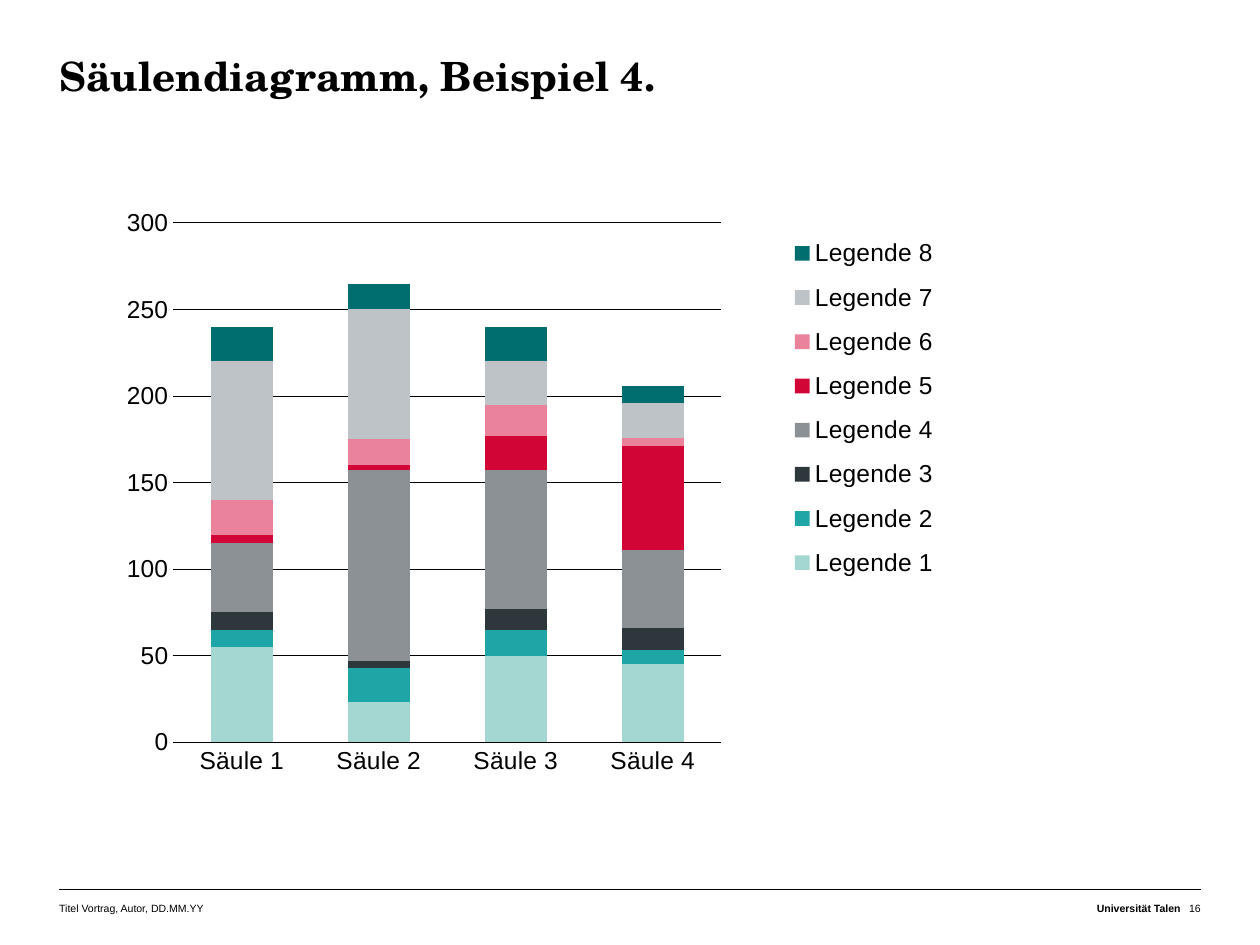
from dataclasses import dataclass

import lxml.etree
import pptx
import pptx.chart.data
import pptx.dml.color
import pptx.enum.chart
import pptx.enum.shapes
import pptx.enum.text
import pptx.oxml
import pptx.oxml.ns
import pptx.util

Pt = pptx.util.Pt
Align = pptx.enum.text.PP_ALIGN
qn = pptx.oxml.ns.qn


@dataclass(frozen=True)
class Theme:
    ink: str = "000000"
    body_font: str = "Arial"
    title_font: str = "TeX Gyre Schola"
    title_size: float = 23
    title_leading: float = 25
    chart_size: float = 14
    footer_size: float = 6
    grid_width: float = 0.5
    rule_width: float = 0.25


@dataclass(frozen=True)
class Box:
    left: float
    top: float
    width: float
    height: float


@dataclass(frozen=True)
class FooterItem:
    text: str
    left: float
    width: float
    align: Align
    bold: bool = False


@dataclass(frozen=True)
class Series:
    name: str
    color: str
    values: tuple[int, ...]


THEME = Theme()
MARGIN, CONTENT_WIDTH = 33.84, 652.32
RIGHT = MARGIN + CONTENT_WIDTH
RULE_TOP, FOOTER_TOP, FOOTER_HEIGHT = 508.32, 514.08, 14.4
TITLE_BOX = Box(MARGIN, 31.68, CONTENT_WIDTH, 59.76)
CHART_BOX = Box(MARGIN, 119.52, CONTENT_WIDTH, 371.52)
# Fractions of the chart area
PLOT_AREA = Box(0.1, 0.02, 0.48, 0.8)
LEGEND_AREA = Box(0.63, 0.02, 0.15, 0.57)

NUMBER_WIDTH, NAME_WIDTH = 11.52, 150.48
FOOTER = (
    FooterItem("Titel Vortrag, Autor, DD.MM.YY", MARGIN, 169.92, Align.LEFT),
    FooterItem("Universität Talen", RIGHT - NUMBER_WIDTH - NAME_WIDTH, NAME_WIDTH, Align.RIGHT, True),
    FooterItem("16", RIGHT - NUMBER_WIDTH, NUMBER_WIDTH, Align.RIGHT),
)
CATEGORIES = [f"Säule {number}" for number in range(1, 5)]
SERIES = (
    Series("Legende 1", "A5D7D2", (55, 23, 50, 45)),
    Series("Legende 2", "1EA5A5", (10, 20, 15, 8)),
    Series("Legende 3", "2D373C", (10, 4, 12, 13)),
    Series("Legende 4", "8C9196", (40, 110, 80, 45)),
    Series("Legende 5", "D20537", (5, 3, 20, 60)),
    Series("Legende 6", "EB829B", (20, 15, 18, 5)),
    Series("Legende 7", "BEC3C8", (80, 75, 25, 20)),
    Series("Legende 8", "006E6E", (20, 15, 20, 10)),
)


def rgb(color: str) -> pptx.dml.color.RGBColor:
    return pptx.dml.color.RGBColor.from_string(color)


def points(box: Box) -> tuple:
    return Pt(box.left), Pt(box.top), Pt(box.width), Pt(box.height)


def style_font(font, name: str, size: float, bold: bool = False) -> None:
    font.name, font.size, font.bold = name, Pt(size), bold
    font.color.rgb = rgb(THEME.ink)


def style_line(line, width: float) -> None:
    line.color.rgb = rgb(THEME.ink)
    line.width = Pt(width)


def prepare_frame(frame, top_inset: float = 0) -> None:
    frame.margin_left = frame.margin_right = frame.margin_bottom = 0
    frame.margin_top = Pt(top_inset)
    frame.word_wrap = True
    frame.auto_size = pptx.enum.text.MSO_AUTO_SIZE.NONE
    frame.vertical_anchor = pptx.enum.text.MSO_ANCHOR.TOP


def add_title(page, text: str) -> None:
    title = page.shapes.title
    title.left, title.top, title.width, title.height = points(TITLE_BOX)
    prepare_frame(title.text_frame)
    title.text_frame.text = text
    para = title.text_frame.paragraphs[0]
    para.alignment = Align.LEFT
    para.line_spacing = Pt(THEME.title_leading)
    style_font(para.runs[0].font, THEME.title_font, THEME.title_size, True)


def add_footer_rule(page) -> None:
    rule = page.shapes.add_connector(
        pptx.enum.shapes.MSO_CONNECTOR.STRAIGHT,
        Pt(MARGIN), Pt(RULE_TOP), Pt(RIGHT), Pt(RULE_TOP))
    style_line(rule.line, THEME.rule_width)
    lxml.etree.SubElement(rule._element.spPr, qn("a:effectLst"))


def add_footer_item(page, item: FooterItem) -> None:
    box = page.shapes.add_textbox(*points(Box(item.left, FOOTER_TOP, item.width, FOOTER_HEIGHT)))
    prepare_frame(box.text_frame, top_inset=1.44)
    box.text_frame.text = item.text
    para = box.text_frame.paragraphs[0]
    para.alignment = item.align
    style_font(para.runs[0].font, THEME.body_font, THEME.footer_size, item.bold)


def set_layout(element, area: Box, position: int, inner: bool = False) -> None:
    """Place a chart part by fractions, as the child at the given position."""
    for old in element.findall(qn("c:layout")):
        element.remove(old)
    layout = lxml.etree.Element(qn("c:layout"))
    manual = lxml.etree.SubElement(layout, qn("c:manualLayout"))
    settings = [("layoutTarget", "inner")] if inner else []
    settings += [("xMode", "edge"), ("yMode", "edge"), ("x", area.left),
                 ("y", area.top), ("w", area.width), ("h", area.height)]
    for tag, value in settings:
        lxml.etree.SubElement(manual, qn(f"c:{tag}")).set("val", str(value))
    element.insert(position, layout)


def add_column_chart(page) -> None:
    data = pptx.chart.data.CategoryChartData()
    data.categories = CATEGORIES
    for entry in SERIES:
        data.add_series(entry.name, entry.values)
    chart = page.shapes.add_chart(
        pptx.enum.chart.XL_CHART_TYPE.COLUMN_STACKED, *points(CHART_BOX), data).chart
    chart.has_title = False
    style_font(chart.font, THEME.body_font, THEME.chart_size)

    plot = chart.plots[0]
    plot.gap_width, plot.overlap, plot.vary_by_categories = 120, 100, False
    for series, entry in zip(plot.series, SERIES):
        series.format.fill.solid()
        series.format.fill.fore_color.rgb = rgb(entry.color)

    for axis in (chart.category_axis, chart.value_axis):
        axis.major_tick_mark = axis.minor_tick_mark = pptx.enum.chart.XL_TICK_MARK.NONE
    style_line(chart.category_axis.format.line, THEME.grid_width)
    values = chart.value_axis
    values.minimum_scale, values.maximum_scale, values.major_unit = 0, 300, 50
    values.format.line.fill.background()
    values.has_major_gridlines = True
    style_line(values.major_gridlines.format.line, THEME.grid_width)

    chart.has_legend = True
    chart.legend.position = pptx.enum.chart.XL_LEGEND_POSITION.RIGHT
    chart.legend.include_in_layout = False
    set_layout(chart.legend._element, LEGEND_AREA, position=1)
    set_layout(chart._chartSpace.chart.plotArea, PLOT_AREA, position=0, inner=True)


def main() -> None:
    deck = pptx.Presentation()
    deck.slide_width, deck.slide_height = Pt(720), Pt(540)
    page = deck.slides.add_slide(deck.slide_layouts.get_by_name("Title Only"))
    add_footer_rule(page)
    add_title(page, "Säulendiagramm, Beispiel 4.")
    for item in FOOTER:
        add_footer_item(page, item)
    add_column_chart(page)
    deck.save("out.pptx")


if __name__ == "__main__":
    main()
